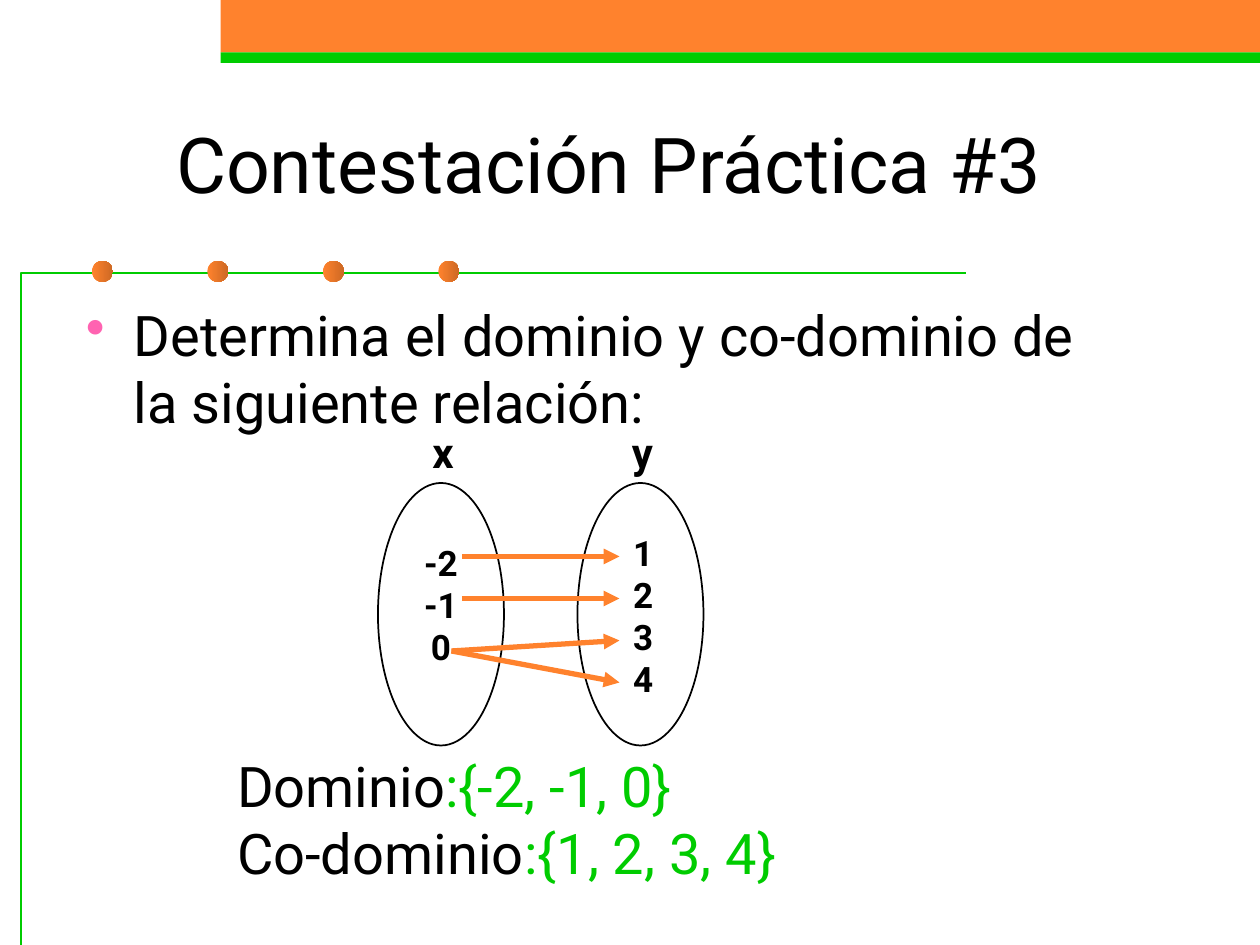
from lxml.etree import SubElement
from pptx import Presentation
from pptx.dml.color import RGBColor as Rgb
from pptx.enum.shapes import MSO_CONNECTOR as Line, MSO_SHAPE as Preset
from pptx.enum.text import MSO_ANCHOR as Anchor, MSO_AUTO_SIZE as Fit, PP_ALIGN as Align
from pptx.oxml.ns import qn
from pptx.util import Inches, Pt

FONT = "Roboto"
COLORS = {"orange": "FF822D", "rust": "CD6924", "green": "00CC00",
          "pink": "FF63B1", "ink": "000000"}
COLUMNS, ROWS = 120, 90
CELL = Inches(10) / COLUMNS


def color(key):
    return Rgb.from_string(COLORS[key])


def grid(*cells):
    return [round(cell * CELL) for cell in cells]


def add_preset(slide, preset, box, fill=None):
    shape = slide.shapes.add_shape(preset, *grid(*box))
    shape.shadow.inherit = False
    if fill:
        shape.fill.solid()
        shape.fill.fore_color.rgb = color(fill)
        shape.line.fill.background()
    else:
        shape.fill.background()
    return shape


def add_text(slide, box, lines, size, bold=False, align=Align.LEFT, wrap=True,
             anchor=Anchor.TOP, fit=Fit.NONE):
    frame = slide.shapes.add_textbox(*grid(*box)).text_frame
    frame.word_wrap, frame.vertical_anchor, frame.auto_size = wrap, anchor, fit
    for index, parts in enumerate(lines):
        paragraph = frame.add_paragraph() if index else frame.paragraphs[0]
        paragraph.alignment = align
        for words, key in parts:
            run = paragraph.add_run()
            run.text = words
            run.font.name, run.font.size, run.font.bold = FONT, Pt(size), bold
            run.font.color.rgb = color(key)
    return frame


def add_bullet(paragraph):
    properties = paragraph._p.get_or_add_pPr()
    properties.set("marL", str(Inches(0.38)))
    properties.set("indent", str(-Inches(0.38)))
    tint = SubElement(properties, qn("a:buClr"))
    SubElement(tint, qn("a:srgbClr"), val=COLORS["pink"])
    SubElement(properties, qn("a:buChar"), char="•")


def add_arrow(slide, start, end):
    arrow = slide.shapes.add_connector(Line.STRAIGHT, *grid(*start, *end))
    arrow.line.color.rgb = color("orange")
    arrow.line.width = Pt(3)
    SubElement(arrow.line._get_or_add_ln(), qn("a:tailEnd"), type="triangle")
    SubElement(arrow._element.spPr, qn("a:effectLst"))


def draw_banner(slide, box):
    left, top, width, height = box
    band = height * 5 / 6
    add_preset(slide, Preset.RECTANGLE, (left, top, width, band), "orange")
    add_preset(slide, Preset.RECTANGLE, (left, top + band, width, height - band), "green")


def draw_frame(slide, box):
    left, top, width, height = box
    corner = slide.shapes.build_freeform(*grid(left, top + height))
    corner.add_line_segments([grid(left, top), grid(left + width, top)], close=False)
    rule = corner.convert_to_shape()
    rule.shadow.inherit = False
    rule.fill.background()
    rule.line.color.rgb = color("green")
    rule.line.width = Pt(0.75)
    for position in range(4):
        dot = add_preset(slide, Preset.OVAL,
                         (left + 6.75 + 11 * position, top - 1.15, 2, 2))
        dot.line.fill.background()
        dot.fill.gradient()
        dot.fill.gradient_angle = 0
        for stop, key in zip(dot.fill.gradient_stops, ("orange", "rust")):
            stop.color.rgb = color(key)


def draw_heading(slide, box):
    add_text(slide, box, [[("Contestación Práctica #3", "ink")]], 44,
             align=Align.CENTER, anchor=Anchor.MIDDLE)


def draw_question(slide, box):
    question = "Determina el dominio y co-dominio de la siguiente relación:"
    frame = add_text(slide, box, [[(question, "ink")]], 32)
    add_bullet(frame.paragraphs[0])


def draw_set(slide, box, name, members, members_box):
    left, top, width, height = box
    oval = add_preset(slide, Preset.OVAL, (left, top + 6, width, height - 6))
    oval.line.color.rgb = color("ink")
    oval.line.width = Pt(1)
    add_text(slide, (left + 4, top, 5, 6), [[(name, "ink")]], 24, bold=True)
    dx, dy, wide, high = members_box
    add_text(slide, (left + dx, top + dy, wide, high),
             [[(member, "ink")] for member in members], 20, bold=True,
             align=Align.CENTER, wrap=False, fit=Fit.SHAPE_TO_FIT_TEXT)


def draw_mapping(slide, box):
    left, top, width, height = box
    oval = 12
    draw_set(slide, (left, top, oval, height), "x", ("-2", "-1", "0"), (3, 11, 6, 13.2))
    draw_set(slide, (left + width - oval, top, oval, height), "y",
             ("1", "2", "3", "4"), (4, 10, 4.5, 17.2))
    sources = ((8, 13), (8, 17), (7, 22), (7, 22))
    for image, (dx, dy) in enumerate(sources):
        add_arrow(slide, (left + dx, top + dy), (left + 23, top + 13 + 4 * image))


def draw_answer(slide, box):
    answers = (("Dominio", ":{-2, -1, 0}"), ("Co-dominio", ":{1, 2, 3, 4}"))
    add_text(slide, box, [[(name, "ink"), (values, "green")] for name, values in answers],
             32, wrap=False, fit=Fit.SHAPE_TO_FIT_TEXT)


def main():
    deck = Presentation()
    deck.slide_width, deck.slide_height = grid(COLUMNS, ROWS)
    slide = deck.slides.add_slide(deck.slide_layouts[6])
    draw_banner(slide, (21, 0, COLUMNS - 21, 6))
    draw_frame(slide, (2, 26, 90, ROWS - 26))
    draw_heading(slide, (7, 8, 102, 15))
    draw_question(slide, (7, 28, 102, 16))
    draw_mapping(slide, (36, 40, 31, 31))
    draw_answer(slide, (21.4, 71, 57.7, 14))
    deck.save("out.pptx")


if __name__ == "__main__":
    main()
